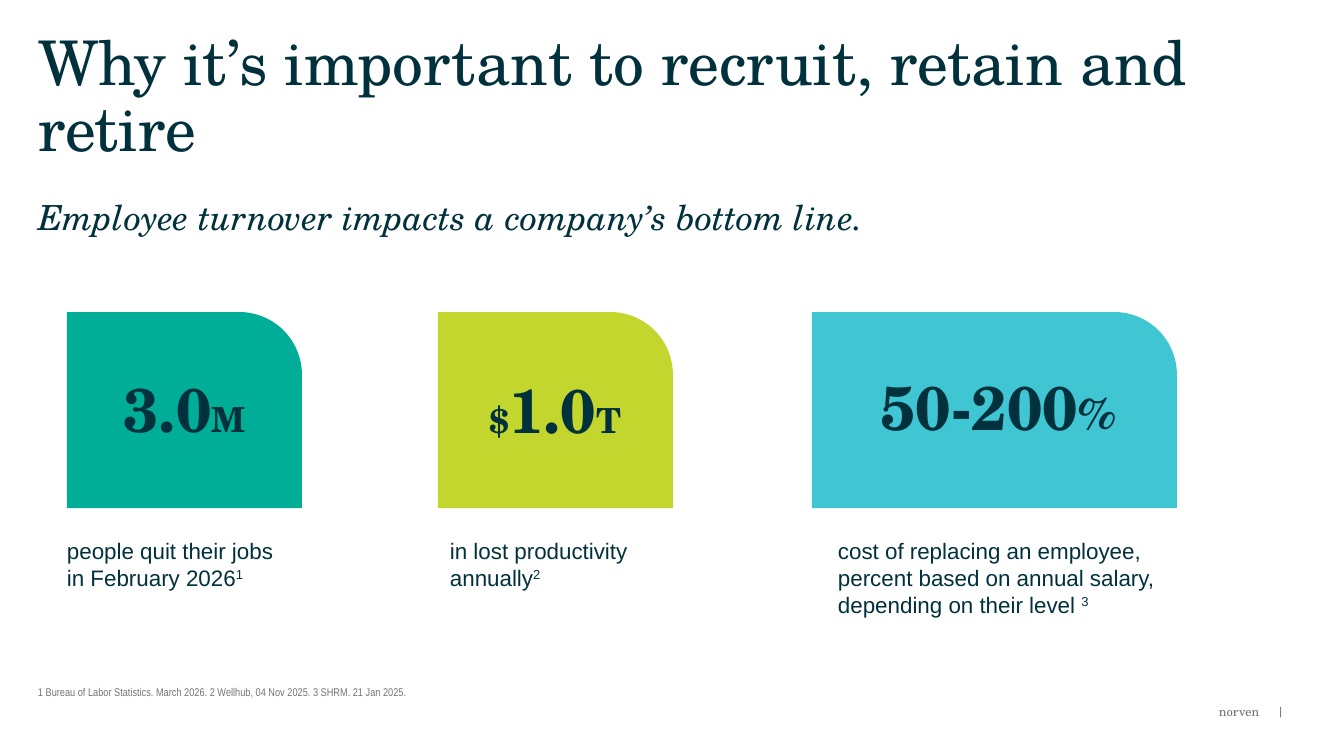
from pptx import Presentation
from pptx.dml.color import RGBColor
from pptx.enum.shapes import MSO_SHAPE as SHAPE
from pptx.enum.text import MSO_ANCHOR as ANCHOR, MSO_AUTO_SIZE as FIT, PP_ALIGN as ALIGN
from pptx.util import Pt
from lxml import etree

# Content
SERIF, SANS, NARROW = "TeX Gyre Schola", "Arial", "Arial Narrow"
INK, GREY = "00313C", "747476"
TITLE = "Why it’s important to recruit, retain and retire"
SUBTITLE = "Employee turnover impacts a company’s bottom line."
SOURCES = "1 Bureau of Labor Statistics. March 2026. 2 Wellhub, 04 Nov 2025. 3 SHRM. 21 Jan 2025."
FOOTER = "norven\t|"
BIG, SMALL = 44, 24.7

# Card (left, width), colour, figure box, figure runs, caption box, caption lines, note
CARDS = [
    ((67, 235), "00AD97", (67, 371, 235), [("3.0", BIG), ("M", SMALL)],
     (67, 235), ["people quit their jobs", "in February 2026"], "1"),
    ((438, 235), "C3D62E", (438, 372, 235), [("$", SMALL), ("1.0", BIG), ("T", SMALL)],
     (450, 215), ["in lost productivity annually"], "2"),
    ((812, 365), "40C5D3", (839, 369, 318), [("50-200", BIG), ("%", 32)],
     (838, 320), ["cost of replacing an employee, percent based on annual salary, "
                  "depending on their level "], "3"),
]
CARD_TOP, CARD_H, CARD_ROUND = 312, 196, 0.32
FIGURE_H, CAPTION_TOP, CAPTION_H = 68, 537, 80


def px(n):
    return round(n * 914400 / 100.8)


def rgb(color):
    return RGBColor.from_string(color)


def place(sp, x, y, w, h):
    sp.left, sp.top, sp.width, sp.height = px(x), px(y), px(w), px(h)


def set_frame(sp, align=ALIGN.LEFT, anchor=ANCHOR.TOP):
    tf = sp.text_frame
    tf.margin_left = tf.margin_top = tf.margin_right = tf.margin_bottom = 0
    tf.word_wrap, tf.auto_size, tf.vertical_anchor = True, FIT.NONE, anchor
    p = tf.paragraphs[0]
    p.alignment = align
    return p


def add_box(x, y, w, h, **frame):
    return set_frame(slide.shapes.add_textbox(px(x), px(y), px(w), px(h)), **frame)


def add_run(p, text, size, font=SERIF, color=INK, bold=False, italic=False):
    r = p.add_run()
    r.text = text
    f = r.font
    f.name, f.size, f.bold, f.italic = font, Pt(size), bold, italic
    f.color.rgb = rgb(color)
    return r


prs = Presentation()
prs.slide_width, prs.slide_height = px(1344), px(756)
slide = prs.slides.add_slide(prs.slide_layouts[5])

# Title and subtitle
title = slide.shapes.title
place(title, 38, 32, 1270, 135)
p = set_frame(title)
p.line_spacing = 0.9
add_run(p, TITLE, BIG)
add_run(add_box(38, 196, 1119, 75), SUBTITLE, SMALL, italic=True)

# Cards with figures and captions
for (x, w), color, (fx, fy, fw), figure, (cx, cw), lines, note in CARDS:
    sp = slide.shapes.add_shape(SHAPE.ROUND_1_RECTANGLE,
                                px(x), px(CARD_TOP), px(w), px(CARD_H))
    sp.adjustments[0] = CARD_ROUND
    sp.shadow.inherit = False
    sp.fill.solid()
    sp.fill.fore_color.rgb = rgb(color)
    sp.line.fill.background()

    p = add_box(fx, fy, fw, FIGURE_H, align=ALIGN.CENTER)
    for text, size in figure:
        add_run(p, text, size, bold=True)

    p = add_box(cx, CAPTION_TOP, cw, CAPTION_H)
    for i, line in enumerate(lines):
        if i:
            p.add_line_break()
        add_run(p, line, 16, SANS)
    r = add_run(p, note, 16, SANS)
    r.font._element.set("baseline", "30000")

# Sources
p = add_box(38, 659, 1270, 40, anchor=ANCHOR.BOTTOM)
add_run(p, SOURCES, 8, NARROW, GREY)

# Footer with a tab stop before the bar
p = add_box(1219, 704, 70, 20)
ns = "{http://schemas.openxmlformats.org/drawingml/2006/main}"
tabs = etree.SubElement(p._p.get_or_add_pPr(), ns + "tabLst")
etree.SubElement(tabs, ns + "tab", pos=str(px(58)), algn="l")
add_run(p, FOOTER, 9, color=GREY)

prs.save("out.pptx")
